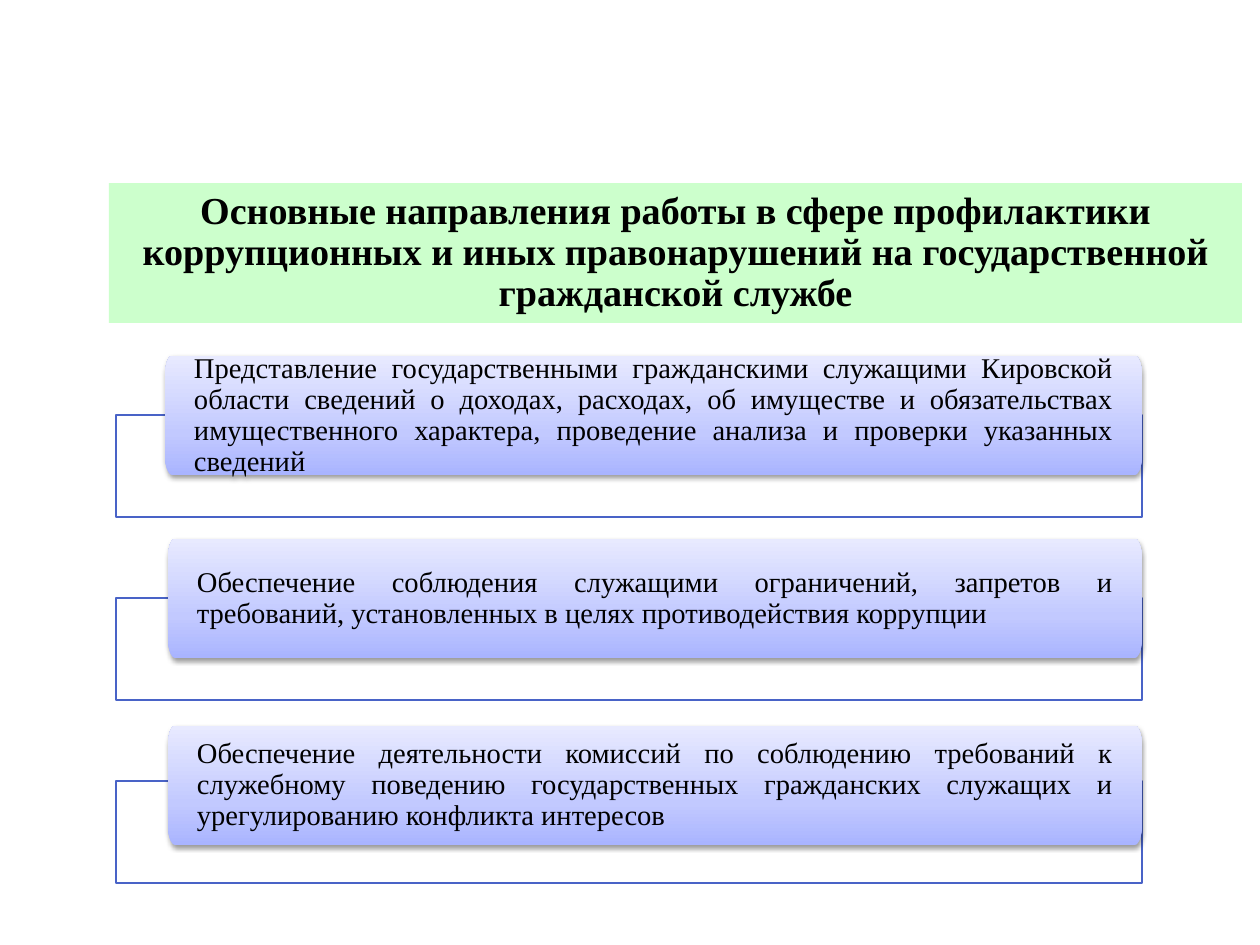
from dataclasses import dataclass
from math import cos, pi, sin

from lxml.etree import SubElement
from pptx import Presentation
from pptx.dml.color import RGBColor
from pptx.enum.shapes import MSO_SHAPE as Shape
from pptx.enum.text import MSO_ANCHOR as Anchor, MSO_AUTO_SIZE as AutoSize, PP_ALIGN as Align
from pptx.oxml.ns import qn
from pptx.util import Pt

PX = 8000  # EMU in one px


@dataclass(frozen=True)
class Theme:
    font: str = "Times New Roman"
    title_size: int = 24
    body_size: int = 18
    text: str = "000000"
    title_fill: str = "CCFFCC"
    frame_fill: str = "FFFFFF"
    frame_line: str = "4963C7"
    card_stops: tuple = ((0, "A9B4FF"), (35, "C2C9FF"), (100, "E8EAFF"))
    shadow: str = "000000"


def write_text(shape, text, *, font, size, color, align, bold=False, inset=(0, 0)):
    """Fill a shape with one paragraph, centred vertically."""
    box = shape.text_frame
    box.word_wrap = True
    box.auto_size = AutoSize.NONE
    box.vertical_anchor = Anchor.MIDDLE
    box.margin_left = box.margin_right = inset[0] * PX
    box.margin_top = box.margin_bottom = inset[1] * PX
    para = box.paragraphs[0]
    para.alignment = align
    para.line_spacing = 0.9
    para.space_before = Pt(0)
    span = para.add_run()
    span.text = text
    span.font.name = font
    span.font.size = Pt(size)
    span.font.bold = bold
    span.font.color.rgb = RGBColor.from_string(color)


def add_color(parent, color, alpha=None):
    node = SubElement(parent, qn("a:srgbClr"), val=color)
    if alpha is not None:
        SubElement(node, qn("a:alpha"), val=str(alpha * 1000))


class SlideBuilder:
    def __init__(self, page, theme):
        self.page = page
        self.theme = theme

    def title(self, text, left, top, width, height):
        shape = self.page.shapes.title
        shape.left, shape.top = left * PX, top * PX
        shape.width, shape.height = width * PX, height * PX
        shape.fill.solid()
        shape.fill.fore_color.rgb = RGBColor.from_string(self.theme.title_fill)
        write_text(shape, text, font=self.theme.font, size=self.theme.title_size,
                   color=self.theme.text, align=Align.CENTER, bold=True)

    def frame(self, left, top, width, height):
        shape = self.page.shapes.add_shape(
            Shape.RECTANGLE, left * PX, top * PX, width * PX, height * PX)
        shape.shadow.inherit = False
        shape.fill.solid()
        shape.fill.fore_color.rgb = RGBColor.from_string(self.theme.frame_fill)
        color = shape._element.spPr.find(qn("a:solidFill"))[0]
        SubElement(color, qn("a:alpha"), val="90000")
        shape.line.color.rgb = RGBColor.from_string(self.theme.frame_line)
        shape.line.width = Pt(0.75)

    def card(self, text, left, top, width, height, corner=(7, 20), steps=8):
        # Outline: four elliptical corners, clockwise from the top left
        radius_x, radius_y = corner
        near_x, far_x = left + radius_x, left + width - radius_x
        near_y, far_y = top + radius_y, top + height - radius_y
        centers = ((near_x, near_y), (far_x, near_y), (far_x, far_y), (near_x, far_y))
        points = []
        for quarter, (center_x, center_y) in enumerate(centers):
            for step in range(steps + 1):
                angle = pi + (quarter + step / steps) * pi / 2
                points.append(((center_x + radius_x * cos(angle)) * PX,
                               (center_y + radius_y * sin(angle)) * PX))
        outline = self.page.shapes.build_freeform(*points[0])
        outline.add_line_segments(points[1:], close=True)
        shape = outline.convert_to_shape()

        # Gradient from the bottom up
        shape.line.fill.background()
        shape.fill.gradient()
        shape.fill.gradient_angle = 90
        properties = shape._element.spPr
        stops = properties.find(qn("a:gradFill")).find(qn("a:gsLst"))
        for stop in list(stops):
            stops.remove(stop)
        for position, color in self.theme.card_stops:
            add_color(SubElement(stops, qn("a:gs"), pos=str(position * 1000)), color)

        # Soft shadow below
        shape.shadow.inherit = False
        shadow = SubElement(properties.find(qn("a:effectLst")), qn("a:outerShdw"),
                            blurRad=str(Pt(3.1)), dist=str(Pt(1.6)),
                            dir="5400000", rotWithShape="0")
        add_color(shadow, self.theme.shadow, alpha=38)

        write_text(shape, text, font=self.theme.font, size=self.theme.body_size,
                   color=self.theme.text, align=Align.JUSTIFY, inset=(29, 1))


TITLE = ("Основные направления работы в сфере профилактики коррупционных и иных "
         "правонарушений на государственной гражданской службе")

# Text, left and top of each card
DIRECTIONS = (
    ("Представление государственными гражданскими служащими Кировской области "
     "сведений о доходах, расходах, об имуществе и обязательствах имущественного "
     "характера, проведение анализа и проверки указанных сведений", 165, 356),
    ("Обеспечение соблюдения служащими ограничений, запретов и требований, "
     "установленных в целях противодействия коррупции", 168, 539),
    ("Обеспечение деятельности комиссий по соблюдению требований к служебному "
     "поведению государственных гражданских служащих и урегулированию конфликта "
     "интересов", 168, 726),
)
FRAME_LEFT, FRAME_TOP, FRAME_WIDTH, FRAME_HEIGHT = 116, 415, 1026, 102
FRAME_STEP = 183
CARD_HEIGHT = 119


def main():
    deck = Presentation()
    deck.slide_width, deck.slide_height = 1260 * PX, 945 * PX
    page = deck.slides.add_slide(deck.slide_layouts[5])
    builder = SlideBuilder(page, Theme())

    builder.title(TITLE, 109, 183, 1133, 140)
    right = FRAME_LEFT + FRAME_WIDTH
    for index, (text, left, top) in enumerate(DIRECTIONS):
        builder.frame(FRAME_LEFT, FRAME_TOP + index * FRAME_STEP, FRAME_WIDTH, FRAME_HEIGHT)
        builder.card(text, left, top, right - left, CARD_HEIGHT)

    deck.save("out.pptx")


if __name__ == "__main__":
    main()
